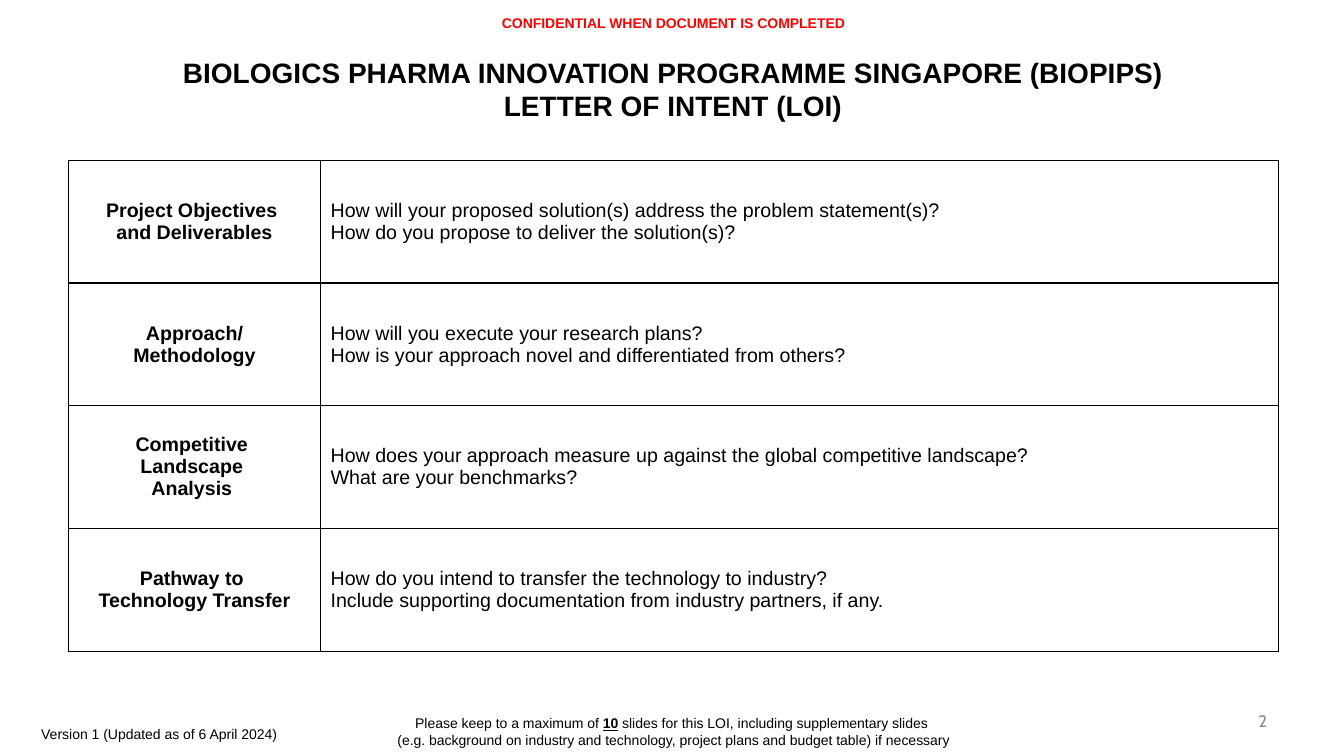
from dataclasses import dataclass

from lxml.etree import SubElement
from pptx import Presentation
from pptx.dml.color import RGBColor
from pptx.enum.text import MSO_ANCHOR as Anchor, MSO_AUTO_SIZE as Fit, PP_ALIGN as Align
from pptx.oxml.ns import qn
from pptx.slide import Slide
from pptx.table import _Cell as Cell
from pptx.text.text import TextFrame as Frame
from pptx.util import Inches, Pt

WIDE, HIGH = Inches(13.33), Inches(7.5)
BLACK, WHITE, RED, GREY = "000000", "FFFFFF", "FF0000", "8C8C8C"


@dataclass(frozen=True)
class Box:
    """A place on the slide, in percent of its width and height."""
    left: float
    top: float
    width: float
    height: float

    def sizes(self) -> tuple[int, int, int, int]:
        return (across(self.left), down(self.top),
                across(self.width), down(self.height))


@dataclass(frozen=True)
class Style:
    size: int
    bold: bool = False
    color: str = BLACK
    align: Align = Align.CENTER
    font: str = "Arial"


@dataclass(frozen=True)
class Label:
    """Text in a box; words between asterisks are bold and underlined."""
    text: str
    box: Box
    style: Style
    anchor: Anchor = Anchor.TOP
    grow: bool = True


@dataclass(frozen=True)
class Topic:
    head: str
    body: str


HEAD = Style(14, bold=True)
BODY = Style(14, align=Align.LEFT)
GRID = Box(5.1, 21.2, 90, 64.93)
SPLIT = (18.75, 71.25)

TOPICS = (
    Topic("Project Objectives \nand Deliverables",
          "How will your proposed solution(s) address the problem statement(s)?\n"
          "How do you propose to deliver the solution(s)?"),
    Topic("Approach/\nMethodology",
          "How will you execute your research plans?\n"
          "How is your approach novel and differentiated from others?"),
    Topic("Competitive \nLandscape \nAnalysis ",
          "How does your approach measure up against the global competitive landscape?\n"
          "What are your benchmarks?"),
    Topic("Pathway to \nTechnology Transfer",
          "How do you intend to transfer the technology to industry?\n"
          "Include supporting documentation from industry partners, if any."),
)

LABELS = (
    Label("2", Box(71.7, 92.67, 23.33, 5.33),
          Style(12, color=GREY, align=Align.RIGHT, font="Cabin"), Anchor.MIDDLE, False),
    Label("BIOLOGICS PHARMA INNOVATION PROGRAMME SINGAPORE (BIOPIPS)\n"
          "LETTER OF INTENT (LOI)",
          Box(7.5, 6.67, 85.15, 8), Style(20, bold=True), grow=False),
    Label("Please keep to a maximum of *10* slides for this LOI, "
          "including supplementary slides \n"
          "(e.g. background on industry and technology, project plans "
          "and budget table) if necessary",
          Box(12.6, 93.87, 75, 5.87), Style(10)),
    Label("Version 1 (Updated as of 6 April 2024)",
          Box(2.33, 95.33, 50, 3.6), Style(10, align=Align.LEFT)),
    Label("CONFIDENTIAL WHEN DOCUMENT IS COMPLETED",
          Box(12.6, 1.2, 75, 3.6), Style(10, bold=True, color=RED)),
)


def across(share: float) -> int:
    return round(WIDE * share / 100)


def down(share: float) -> int:
    return round(HIGH * share / 100)


def paint(code: str) -> RGBColor:
    return RGBColor.from_string(code)


def write(frame: Frame, text: str, style: Style) -> None:
    frame.text = text.replace("*", "")
    for para, line in zip(frame.paragraphs, text.split("\n")):
        para.alignment = style.align
        parts = line.split("*")
        para.runs[0].text = parts[0]
        for part in parts[1:]:
            para.add_run().text = part
        for place, run in enumerate(para.runs):
            stress = place % 2 == 1
            font = run.font
            font.name, font.size = style.font, Pt(style.size)
            font.bold, font.underline = style.bold or stress, stress
            font.color.rgb = paint(style.color)


def add_label(slide: Slide, label: Label) -> None:
    frame = slide.shapes.add_textbox(*label.box.sizes()).text_frame
    frame.word_wrap = True
    frame.auto_size = Fit.SHAPE_TO_FIT_TEXT if label.grow else Fit.NONE
    frame.vertical_anchor = label.anchor
    write(frame, label.text, label.style)


def add_edges(cell: Cell) -> None:
    props = cell._tc.get_or_add_tcPr()
    for place, side in enumerate(("lnL", "lnR", "lnT", "lnB")):
        edge = SubElement(props, qn(f"a:{side}"), w=str(Pt(1)))
        fill = SubElement(edge, qn("a:solidFill"))
        SubElement(fill, qn("a:srgbClr"), val=BLACK)
        props.insert(place, edge)


def add_topics(slide: Slide) -> None:
    table = slide.shapes.add_table(len(TOPICS), len(SPLIT), *GRID.sizes()).table
    table.first_row = table.horz_banding = False
    for col, share in zip(table.columns, SPLIT):
        col.width = across(share)
    for row, topic in zip(table.rows, TOPICS):
        row.height = down(GRID.height / len(TOPICS))
        pairs = ((topic.head, HEAD), (topic.body, BODY))
        for cell, (text, style) in zip(row.cells, pairs):
            cell.fill.solid()
            cell.fill.fore_color.rgb = paint(WHITE)
            cell.vertical_anchor = Anchor.MIDDLE
            write(cell.text_frame, text, style)
            add_edges(cell)


def main() -> None:
    deck = Presentation()
    deck.slide_width, deck.slide_height = WIDE, HIGH
    slide = deck.slides.add_slide(deck.slide_layouts[6])
    add_topics(slide)
    for label in LABELS:
        add_label(slide, label)
    deck.save("out.pptx")


if __name__ == "__main__":
    main()
